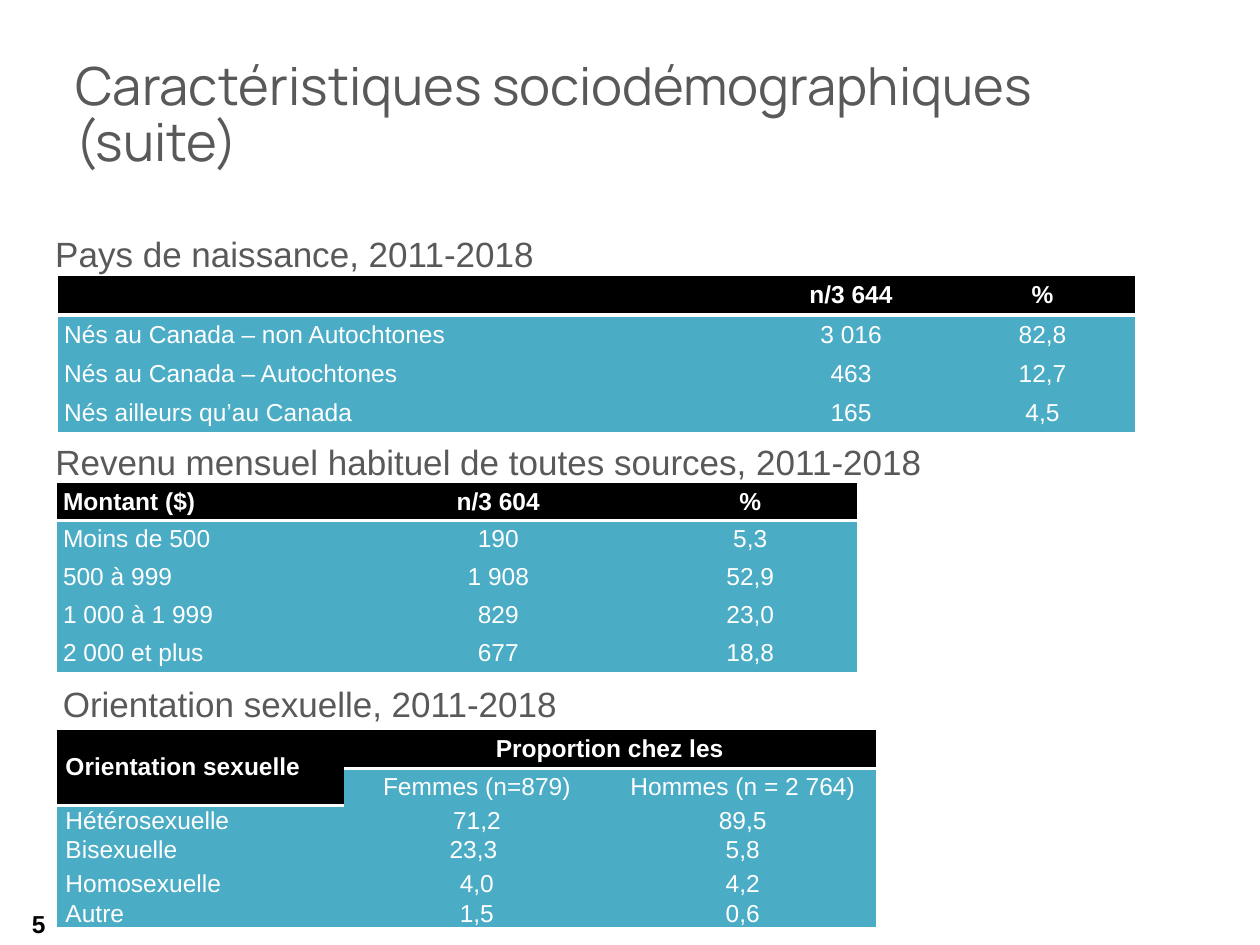
from lxml.etree import SubElement
from pptx import Presentation
from pptx.dml.color import RGBColor
from pptx.enum.text import MSO_ANCHOR as Anchor, PP_ALIGN as Align
from pptx.oxml import parse_xml
from pptx.oxml.ns import nsdecls, qn
from pptx.util import Inches, Pt

COLORS = {"grey": "595959", "black": "000000", "white": "FFFFFF", "teal": "4BACC6"}
COLUMNS, ROWS = 100, 75
PLAIN_TABLE = "{2D5ABB26-0587-4C30-8999-92F81FD0307C}"


def color(name):
    return RGBColor.from_string(COLORS[name])


def write(frame, text, size=14, font="Arial", ink="white", bold=False,
          align=Align.LEFT, spacing=None):
    para = frame.paragraphs[0]
    para.alignment = align
    if spacing:
        para.line_spacing = spacing
    if text:
        span = para.add_run()
        span.text = text
        span.font.name, span.font.size, span.font.bold = font, Pt(size), bold
        span.font.color.rgb = color(ink)


def underline_cell(cell, points=2):
    """Draw a white rule along the bottom of a cell."""
    line = parse_xml(f'<a:lnB {nsdecls("a")} w="{Pt(points)}"/>')
    fill = SubElement(line, qn("a:solidFill"))
    SubElement(fill, qn("a:srgbClr")).set("val", COLORS["white"])
    cell._tc.get_or_add_tcPr().insert(0, line)


class SlideBuilder:
    """Places elements on a grid of 100 columns by 75 rows."""

    def __init__(self, deck):
        self.page = deck.slides.add_slide(deck.slide_layouts[6])
        self.column = deck.slide_width / COLUMNS
        self.row = deck.slide_height / ROWS

    def area(self, left, top, width, height):
        return (round(left * self.column), round(top * self.row),
                round(width * self.column), round(height * self.row))

    def text(self, place, text, anchor=Anchor.TOP, **style):
        frame = self.page.shapes.add_textbox(*self.area(*place)).text_frame
        frame.word_wrap = True
        frame.vertical_anchor = anchor
        write(frame, text, **style)

    def caption(self, left, top, width, text):
        self.text((left, top, width, 4.4), text, size=20, ink="grey")

    def table(self, left, top, widths, heights, data, side=0.05,
              anchor=Anchor.MIDDLE, header_rows=1, merges=()):
        """Merges are (first row, first column, last row, last column)."""
        place = self.area(left, top, sum(widths), sum(heights))
        frame = self.page.shapes.add_table(len(heights), len(widths), *place)
        table = frame.table
        table._tbl.tblPr.find(qn("a:tableStyleId")).text = PLAIN_TABLE
        for column, width in zip(table.columns, widths):
            column.width = round(width * self.column)
        for row, height in zip(table.rows, heights):
            row.height = round(height * self.row)
        for top_row, first, bottom_row, last in merges:
            table.cell(top_row, first).merge(table.cell(bottom_row, last))
        for r, values in enumerate(data):
            for c, value in enumerate(values):
                cell = table.cell(r, c)
                header = r == 0 or cell.is_spanned
                cell.margin_left = cell.margin_right = Inches(side)
                cell.margin_top = cell.margin_bottom = 0
                cell.vertical_anchor = Anchor.MIDDLE if r < header_rows else anchor
                cell.fill.solid()
                cell.fill.fore_color.rgb = color("black" if header else "teal")
                if header:
                    underline_cell(cell)
                write(cell.text_frame, value, bold=header,
                      align=Align.CENTER if c else Align.LEFT)


def main():
    deck = Presentation()
    deck.slide_width, deck.slide_height = Inches(10), Inches(7.5)
    slide = SlideBuilder(deck)

    slide.text((-0.2, 71.3, 4.8, 4), "5", anchor=Anchor.MIDDLE, ink="black",
               bold=True, align=Align.RIGHT)
    slide.text((5, 3, 90, 12.5), "Caractéristiques sociodémographiques (suite)",
               anchor=Anchor.MIDDLE, size=30, font="Manrope", ink="grey", spacing=0.9)

    slide.table(4.5, 38.3, [23.5, 23.1, 16.9], [3] * 5, [
        ("Montant ($)", "n/3 604", "%"),
        ("Moins de 500", "190", "5,3"),
        ("500 à 999", "1 908", "52,9"),
        ("1 000 à 1 999", "829", "23,0"),
        ("2 000 et plus", "677", "18,8"),
    ])
    slide.caption(3.4, 34.5, 71.8, "Revenu mensuel habituel de toutes sources, 2011-2018")

    slide.table(4.5, 57.9, [22.8, 21.1, 21.1], [3.1, 2.9, 2.3, 2.3, 2.7, 2.3], [
        ("Orientation sexuelle", "Proportion chez les", ""),
        ("", "Femmes (n=879)", "Hommes (n = 2 764)"),
        ("Hétérosexuelle", "71,2", "89,5"),
        ("Bisexuelle", "23,3 ", "5,8"),
        ("Homosexuelle", "4,0", "4,2"),
        ("Autre", "1,5", "0,6"),
    ], side=0.07, anchor=Anchor.BOTTOM, header_rows=2,
        merges=[(0, 0, 1, 0), (0, 1, 0, 2)])
    slide.caption(4, 53.7, 41.9, "Orientation sexuelle, 2011-2018")

    slide.table(4.6, 21.9, [55.1, 15.7, 14.7], [3.1] * 4, [
        ("", "n/3 644", "%"),
        ("Nés au Canada – non Autochtones", "3 016", "82,8"),
        ("Nés au Canada – Autochtones", "463", "12,7"),
        ("Nés ailleurs qu’au Canada", "165", "4,5"),
    ])
    slide.caption(3.4, 18, 46.6, "Pays de naissance, 2011-2018")

    deck.save("out.pptx")


if __name__ == "__main__":
    main()
